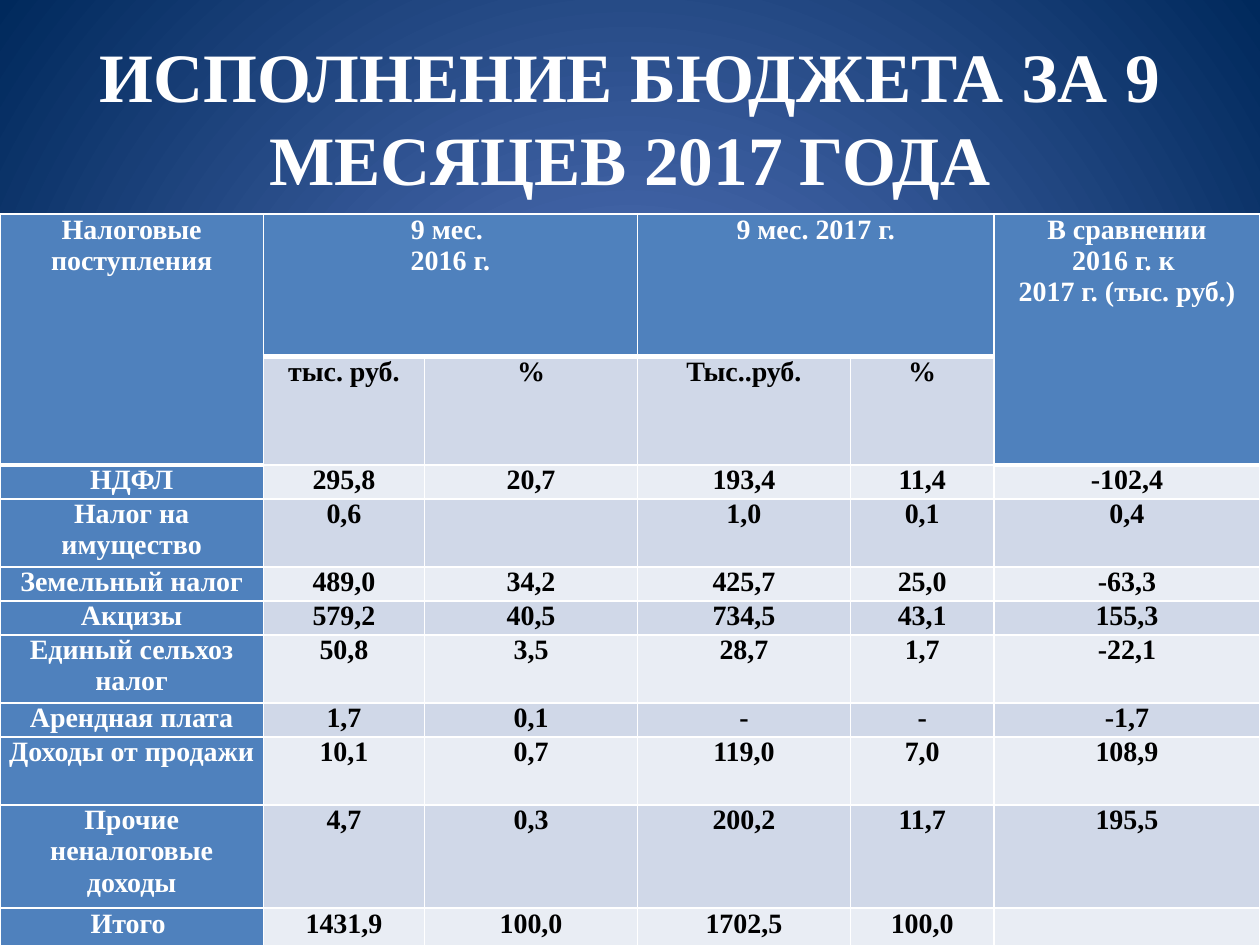
from lxml.etree import SubElement as add_element
from pptx import Presentation
from pptx.dml.color import RGBColor as Color
from pptx.enum.text import MSO_ANCHOR as Anchor, PP_ALIGN as Align
from pptx.oxml.ns import qn
from pptx.util import Inches, Pt

COLORS = {
    "glow": "5E7CC5", "edge": "00295C", "white": "FFFFFF", "black": "000000",
    "header": "4F81BD", "dark_band": "D0D8E8", "light_band": "E9EDF4",
}
COLUMNS = [2.09, 1.28, 1.69, 1.69, 1.14, 2.11]
ROWS = [1.13, 0.86, 0.27, 0.54, 0.27, 0.27, 0.54, 0.27, 0.54, 0.82, 0.27]
BUDGET = [
    ["Налоговые поступления", "9 мес. \n2016 г.", "", "9 мес. 2017 г.", "",
     "В сравнении\n2016 г. к \n2017 г. (тыс. руб.)"],
    ["", "тыс. руб.", "%", "Тыс..руб.", "%", ""],
    ["НДФЛ", "295,8", "20,7", "193,4", "11,4", "-102,4"],
    ["Налог на имущество", "0,6", "", "1,0", "0,1", "0,4"],
    ["Земельный налог", "489,0", "34,2", "425,7", "25,0", "-63,3"],
    ["Акцизы", "579,2", "40,5", "734,5", "43,1", "155,3"],
    ["Единый сельхоз налог", "50,8", "3,5", "28,7", "1,7", "-22,1"],
    ["Арендная плата", "1,7", "0,1", "-", "-", "-1,7"],
    ["Доходы от продажи", "10,1", "0,7", "119,0", "7,0", "108,9"],
    ["Прочие неналоговые доходы", "4,7", "0,3", "200,2", "11,7", "195,5"],
    ["Итого ", "1431,9", "100,0", "1702,5", "100,0", ""],
]


def write(frame, text, size=16, color="white", bold=True):
    for index, line in enumerate(text.split("\n")):
        para = frame.add_paragraph() if index else frame.paragraphs[0]
        para.alignment = Align.CENTER
        span = para.add_run()
        span.text = line
        span.font.name = "Times New Roman"
        span.font.size = Pt(size)
        span.font.bold = bold
        span.font.color.rgb = Color.from_string(COLORS[color])


def set_borders(cell, **widths):
    properties = cell._tc.get_or_add_tcPr()
    for position, side in enumerate("LRTB"):
        line = add_element(properties, qn(f"a:ln{side}"), w=str(Pt(widths.get(side, 1))))
        fill = add_element(line, qn("a:solidFill"))
        add_element(fill, qn("a:srgbClr"), val=COLORS["white"])
        properties.remove(line)
        properties.insert(position, line)


deck = Presentation()
deck.slide_width, deck.slide_height = Inches(10), Inches(7.5)
page = deck.slides.add_slide(deck.slide_layouts[6])

backdrop = page.background.fill
backdrop.gradient()
for stop, name in zip(backdrop.gradient_stops, ["glow", "edge"]):
    stop.color.rgb = Color.from_string(COLORS[name])
gradient = page.background._cSld.find(".//" + qn("a:gradFill"))
for stop, position in zip(gradient.iter(qn("a:gs")), ["0", "100000"]):
    stop.set("pos", position)
gradient.remove(gradient.find(qn("a:lin")))
circle = add_element(gradient, qn("a:path"), {"path": "circle"})
add_element(circle, qn("a:fillToRect"), dict.fromkeys("ltrb", "50000"))

title = page.shapes.add_textbox(Inches(0.5), Inches(0.3), Inches(9), Inches(1.25))
title.text_frame.word_wrap = True
title.text_frame.vertical_anchor = Anchor.MIDDLE
write(title.text_frame, "ИСПОЛНЕНИЕ БЮДЖЕТА ЗА 9 МЕСЯЦЕВ 2017 ГОДА", size=39.6)

table = page.shapes.add_table(
    len(ROWS), len(COLUMNS), 0, Inches(1.7), Inches(sum(COLUMNS)), Inches(sum(ROWS))
).table
for column, width in zip(table.columns, COLUMNS):
    column.width = Inches(width)
for row, height in zip(table.rows, ROWS):
    row.height = Inches(height)

for r, values in enumerate(BUDGET):
    for c, value in enumerate(values):
        cell = table.cell(r, c)
        heading = r == 0 or c == 0 or (r == 1 and c == 5)
        band = "dark_band" if r % 2 else "light_band"
        cell.margin_left = cell.margin_right = Inches(0.07)
        cell.margin_top = cell.margin_bottom = 0
        cell.fill.solid()
        cell.fill.fore_color.rgb = Color.from_string(COLORS["header" if heading else band])
        write(cell.text_frame, value, color="white" if heading else "black")
        header_end = 1 if c in (0, 5) else 0
        set_borders(cell, B=3 if r in (0, header_end) else 1, T=3 if r == header_end + 1 else 1)

for first, last in [((0, 0), (1, 0)), ((0, 1), (0, 2)), ((0, 3), (0, 4)), ((0, 5), (1, 5))]:
    table.cell(*first).merge(table.cell(*last))

deck.save("out.pptx")
